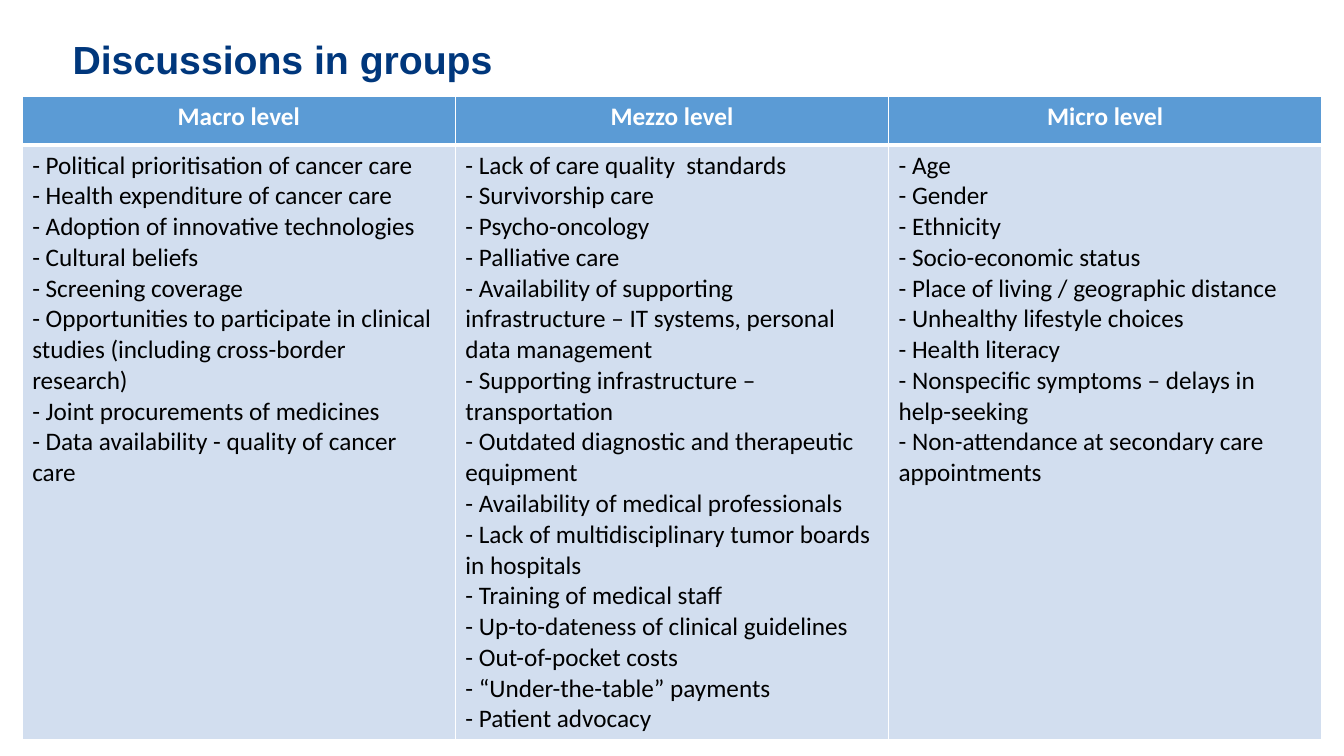
"""Build the slide on group discussions at macro, mezzo and micro level."""
from dataclasses import dataclass

import pptx
import pptx.dml.color
import pptx.enum.text
import pptx.oxml
import pptx.oxml.ns
import pptx.slide
import pptx.table
import pptx.util

Inches = pptx.util.Inches
Pt = pptx.util.Pt
RGBColor = pptx.dml.color.RGBColor
PP_ALIGN = pptx.enum.text.PP_ALIGN

NAVY = RGBColor(0x00, 0x37, 0x7C)
BLUE = RGBColor(0x5B, 0x9B, 0xD5)
PALE_BLUE = RGBColor(0xD2, 0xDE, 0xEF)
WHITE = RGBColor(0xFF, 0xFF, 0xFF)
BLACK = RGBColor(0x00, 0x00, 0x00)


@dataclass(frozen=True)
class Level:
    heading: str
    topics: tuple[str, ...]


@dataclass(frozen=True)
class CellStyle:
    fill: RGBColor
    ink: RGBColor
    bold: bool
    align: PP_ALIGN
    top_border: float
    bottom_border: float


HEADING_STYLE = CellStyle(BLUE, WHITE, True, PP_ALIGN.CENTER, 1, 3)
TOPIC_STYLE = CellStyle(PALE_BLUE, BLACK, False, PP_ALIGN.LEFT, 3, 1)

LEVELS = (
    Level("Macro level", (
        "Political prioritisation of cancer care",
        "Health expenditure of cancer care",
        "Adoption of innovative technologies",
        "Cultural beliefs",
        "Screening coverage",
        "Opportunities to participate in clinical studies (including cross-border research)",
        "Joint procurements of medicines",
        "Data availability - quality of cancer care",
    )),
    Level("Mezzo level", (
        "Lack of care quality  standards",
        "Survivorship care",
        "Psycho-oncology",
        "Palliative care",
        "Availability of supporting infrastructure – IT systems, personal data management",
        "Supporting infrastructure – transportation",
        "Outdated diagnostic and therapeutic equipment",
        "Availability of medical professionals",
        "Lack of multidisciplinary tumor boards in hospitals",
        "Training of medical staff",
        "Up-to-dateness of clinical guidelines",
        "Out-of-pocket costs",
        "“Under-the-table” payments",
        "Patient advocacy",
    )),
    Level("Micro level", (
        "Age",
        "Gender",
        "Ethnicity",
        "Socio-economic status",
        "Place of living / geographic distance",
        "Unhealthy lifestyle choices",
        "Health literacy",
        "Nonspecific symptoms – delays in help-seeking",
        "Non-attendance at secondary care appointments",
    )),
)


def add_borders(cell: pptx.table._Cell, style: CellStyle) -> None:
    widths = {"L": 1, "R": 1, "T": style.top_border, "B": style.bottom_border}
    properties = cell._tc.get_or_add_tcPr()
    for side, width in widths.items():
        properties.append(pptx.oxml.parse_xml(
            f'<a:ln{side} {pptx.oxml.ns.nsdecls("a")} w="{Pt(width)}">'
            f'<a:solidFill><a:srgbClr val="{WHITE}"/></a:solidFill></a:ln{side}>'
        ))


def fill_cell(cell: pptx.table._Cell, text: str, style: CellStyle) -> None:
    add_borders(cell, style)
    cell.fill.solid()
    cell.fill.fore_color.rgb = style.fill
    cell.text_frame.text = text
    for paragraph in cell.text_frame.paragraphs:
        paragraph.alignment = style.align
        for run in paragraph.runs:
            run.font.name = "Calibri"
            run.font.size = Pt(18)
            run.font.bold = style.bold
            run.font.color.rgb = style.ink


def add_heading(slide: pptx.slide.Slide, text: str) -> None:
    heading = slide.shapes.title
    heading.left, heading.top = Inches(0.72), Inches(0.4)
    heading.width, heading.height = Inches(11.04), Inches(1.13)
    frame = heading.text_frame
    frame.text = text
    frame.word_wrap = True
    frame.auto_size = pptx.enum.text.MSO_AUTO_SIZE.NONE
    frame.vertical_anchor = pptx.enum.text.MSO_ANCHOR.TOP
    frame.margin_left = frame.margin_right = frame.margin_top = frame.margin_bottom = 0
    paragraph = frame.paragraphs[0]
    paragraph.alignment = PP_ALIGN.LEFT
    paragraph.line_spacing = 0.9
    font = paragraph.runs[0].font
    font.name = "Arial"
    font.size = Pt(28)
    font.bold = True
    font.color.rgb = NAVY


def add_levels(slide: pptx.slide.Slide, levels: tuple[Level, ...]) -> None:
    grid = slide.shapes.add_table(
        2, len(levels), Inches(0.22), Inches(0.96), Inches(12.89), Inches(6.28)
    ).table
    grid.rows[0].height = Inches(0.48)
    grid.rows[1].height = Inches(5.8)
    for column, level in enumerate(levels):
        topics = "\n".join(f"- {topic}" for topic in level.topics)
        fill_cell(grid.cell(0, column), level.heading, HEADING_STYLE)
        fill_cell(grid.cell(1, column), topics, TOPIC_STYLE)


def main() -> None:
    deck = pptx.Presentation()
    deck.slide_width, deck.slide_height = Inches(13.33), Inches(7.5)
    slide = deck.slides.add_slide(deck.slide_layouts[5])
    add_heading(slide, "Discussions in groups")
    add_levels(slide, LEVELS)
    deck.save("out.pptx")


if __name__ == "__main__":
    main()
